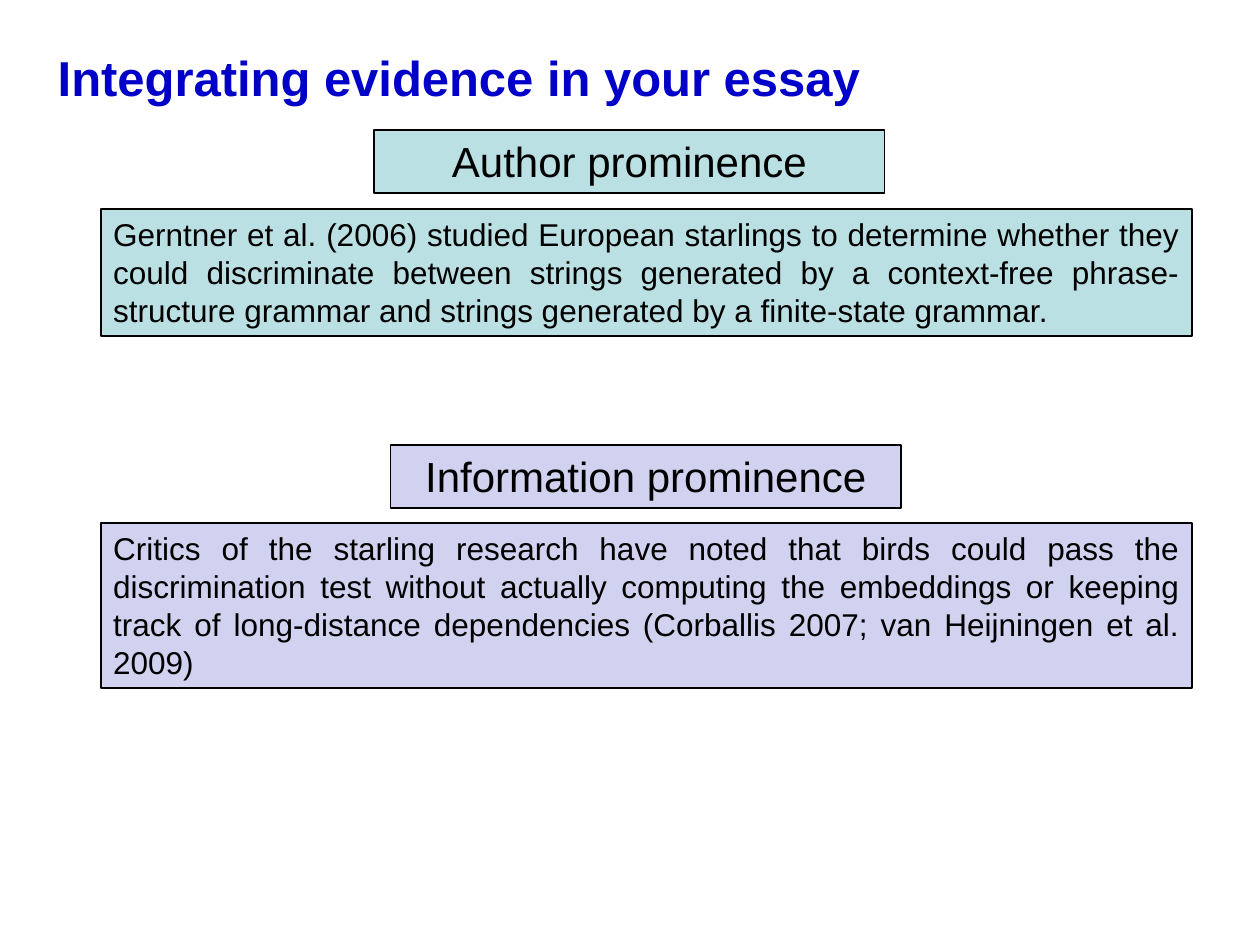
from pptx import Presentation
from pptx import util as u
from pptx.dml.color import RGBColor
from pptx.enum import shapes, text

BLUE = RGBColor(0x00, 0x00, 0xC8)
BLACK = RGBColor(0x00, 0x00, 0x00)
TEAL = RGBColor(0xBB, 0xE0, 0xE3)
LILAC = RGBColor(0xD1, 0xD1, 0xF0)


class Deck:
    face = "Arial"

    def __init__(self, show):
        self.slide = show.slides.add_slide(show.slide_layouts[6])

    def letter(self, shape, words, size, color, align, bold=False):
        frame = shape.text_frame
        frame.word_wrap = True
        frame.vertical_anchor = text.MSO_ANCHOR.TOP
        para = frame.paragraphs[0]
        para.text = words
        para.alignment = align
        font = para.font
        font.name, font.size, font.bold = self.face, u.Pt(size), bold
        font.color.rgb = color
        return frame

    def title(self, words, *place):
        box = self.slide.shapes.add_textbox(*map(u.Inches, place))
        frame = self.letter(box, words, 28, BLUE, text.PP_ALIGN.LEFT, True)
        frame.margin_top = u.Inches(0.09)

    def panel(self, words, place, fill, size, align):
        box = self.slide.shapes.add_shape(
            shapes.MSO_SHAPE.RECTANGLE, *map(u.Inches, place))
        box.shadow.inherit = False
        box.fill.solid()
        box.fill.fore_color.rgb = fill
        box.line.color.rgb = BLACK
        box.line.width = u.Pt(1)
        frame = self.letter(box, words, size, BLACK, align)
        frame.auto_size = text.MSO_AUTO_SIZE.SHAPE_TO_FIT_TEXT

    def label(self, words, left, top, fill):
        self.panel(words, (left, top, 4.05, 0.5), fill, 24,
                   text.PP_ALIGN.CENTER)

    def quote(self, words, top, height, fill):
        self.panel(words, (0.8, top, 8.66, height), fill, 18,
                   text.PP_ALIGN.JUSTIFY)


def main():
    show = Presentation()
    show.slide_width, show.slide_height = u.Inches(10), u.Inches(7.5)
    deck = Deck(show)
    deck.title("Integrating evidence in your essay", 0.36, 0.29, 9.11, 0.73)
    deck.label("Author prominence", 2.97, 1.03, TEAL)
    deck.quote(
        "Gerntner et al. (2006) studied European starlings to determine "
        "whether they could discriminate between strings generated by a "
        "context-free phrase-structure grammar and strings generated by a "
        "finite-state grammar.", 1.66, 1.01, TEAL)
    deck.label("Information prominence", 3.1, 3.53, LILAC)
    deck.quote(
        "Critics of the starling research have noted that birds could pass "
        "the discrimination test without actually computing the embeddings "
        "or keeping track of long-distance dependencies (Corballis 2007; "
        "van Heijningen et al. 2009)", 4.15, 1.31, LILAC)
    show.save("out.pptx")


if __name__ == "__main__":
    main()
